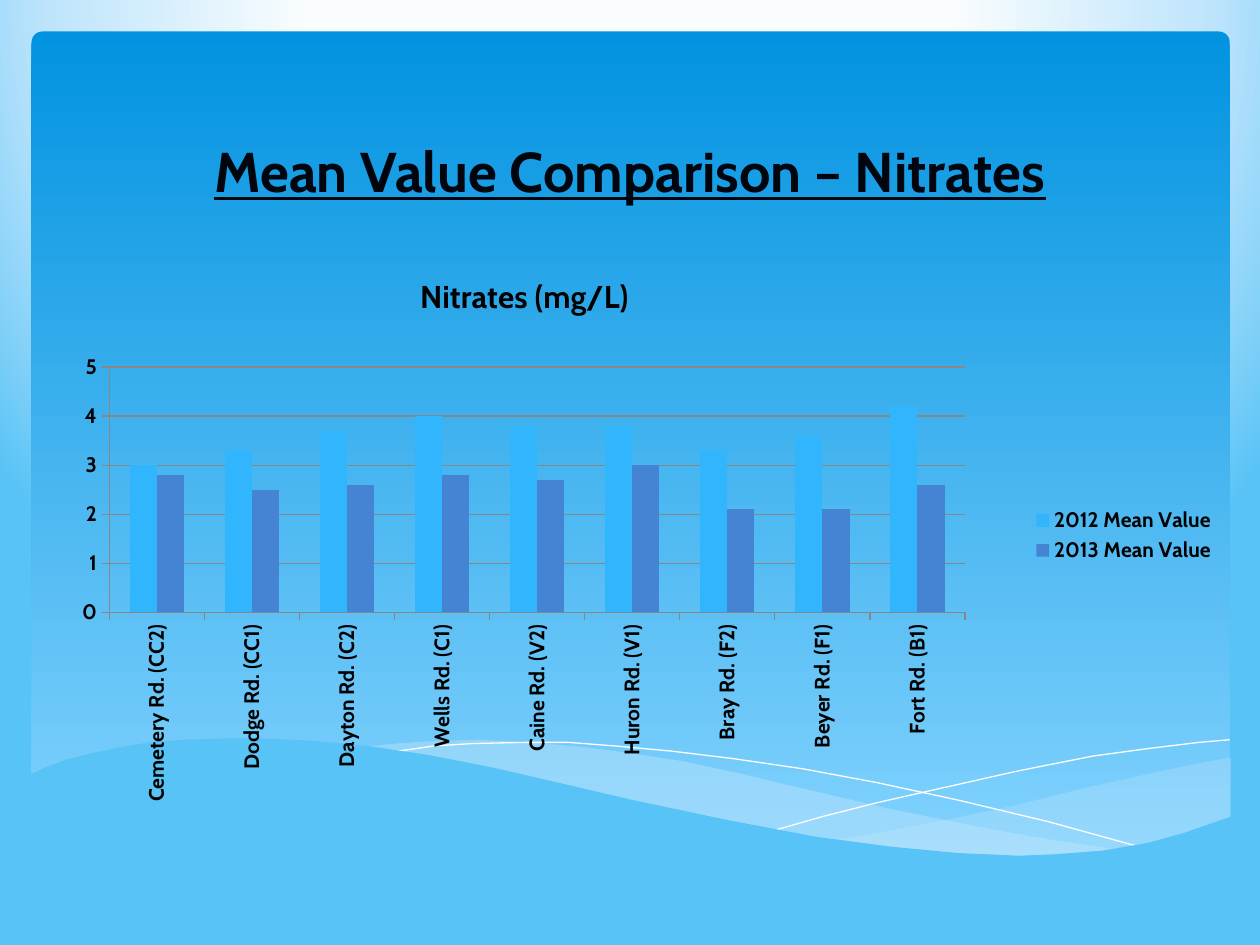
from lxml import etree
from pptx import Presentation
from pptx.chart.data import CategoryChartData
from pptx.dml.color import RGBColor
from pptx.enum import chart as charts, shapes, text
from pptx.oxml import parse_xml
from pptx.oxml.ns import nsdecls, qn
from pptx.util import Pt

FONT = "Cabin"
BLACK = RGBColor(0x00, 0x00, 0x00)
INK = RGBColor(0x01, 0x06, 0x0E)
WHITE = RGBColor(0xFF, 0xFF, 0xFF)
GRAY = RGBColor(0x87, 0x87, 0x87)
SKY_TOP = RGBColor(0x02, 0x93, 0xE0)
SKY_BOTTOM = RGBColor(0x83, 0xD3, 0xFE)
MIST = RGBColor(0xC6, 0xE7, 0xFC)
GLOW = RGBColor(0xFA, 0xFD, 0xFE)
HAZE = RGBColor(0xBE, 0xE4, 0xFC)
WATER = RGBColor(0x58, 0xC3, 0xF6)

FAR_WAVE = [
    (687, 10.8), (667.4, 14.4), (636.5, 20.9), (604.1, 28.1), (563.8, 38.2),
    (526.3, 46.1), (492.5, 52.6), (460.1, 58.3), (481.7, 61.2), (511.2, 64.8),
    (537.8, 67), (570.2, 67.7), (599, 66.2), (624.2, 63.4), (647.3, 58.3),
    (668.2, 52.6), (687, 45.4)]
MIDDLE_WAVE = [
    (627.1, 64.1), (586.8, 58.3), (542.2, 50.4), (492.5, 40.3), (437, 27.4),
    (403.9, 19.4), (373.7, 13), (344.9, 8.6), (318.2, 5), (285.8, 2.2),
    (257, 0.7), (231.8, 1.4), (209.5, 2.9), (190.1, 5), (216, 8.6),
    (244.8, 13), (275, 19.4), (307.4, 27.4), (365, 40.3), (416.9, 51.1),
    (463, 59), (504, 64.8), (540.7, 67), (573.1, 67.7), (601.9, 67)]
FALLING_LINE = [
    (206.6, 7.9), (231.1, 4.3), (253.4, 2.9), (283.7, 2.2), (308.2, 2.2),
    (335.5, 4.3), (367.2, 7.2), (402.5, 11.5), (442.1, 17.3), (484.6, 25.2),
    (531.4, 35.3), (582.5, 47.5), (637.2, 62.6)]
RISING_LINE = [
    (425.5, 52.6), (453.6, 44.6), (484.6, 36.7), (522.7, 28.1), (564.5, 18.7),
    (607.7, 10.1), (639.4, 5.8), (668.9, 2.2), (686.2, 0.7)]
FRONT_WAVE = [
    (687, 44.6), (660, 54), (639, 59.8), (613.4, 64.1), (586, 66.2),
    (566, 67), (531.4, 65.5), (493.2, 61.9), (450, 56.2), (400.3, 46.8),
    (345.6, 35.3), (305.3, 25.9), (265, 16.6), (228.2, 9.4), (193.7, 4.3),
    (163.4, 1.4), (135.4, 0), (110.9, 0), (88.6, 0.7), (69.1, 2.2),
    (51.8, 5), (38.2, 7.9), (20.9, 12.2), (9.4, 16.6), (0, 20.9),
    (0, 104.4), (687, 104.4)]

SITES = ["Cemetery Rd. (CC2)", "Dodge Rd. (CC1)", "Dayton Rd. (C2)",
         "Wells Rd. (C1)", "Caine Rd. (V2)", "Huron Rd. (V1)",
         "Bray Rd. (F2)", "Beyer Rd. (F1)", "Fort Rd. (B1)"]
MEANS = [
    ("2012 Mean Value", RGBColor(0x31, 0xB6, 0xFD),
     [3, 3.3, 3.7, 4, 3.8, 3.8, 3.3, 3.6, 4.2]),
    ("2013 Mean Value", RGBColor(0x45, 0x84, 0xD3),
     [2.8, 2.5, 2.6, 2.8, 2.7, 3, 2.1, 2.1, 2.6])]


def paint_background(page):
    """Fill the page with a glow that spreads from the top."""
    stops = "".join(
        f'<a:gs pos="{place * 1000}"><a:srgbClr val="{color}"/></a:gs>'
        for place, color in [(40, GLOW), (74, HAZE), (100, WATER)])
    fill = page.background.fill
    fill.solid()
    solid = page._element.find(".//" + qn("p:bgPr")).find(qn("a:solidFill"))
    solid.getparent().replace(solid, parse_xml(
        f'<a:gradFill {nsdecls("a")} rotWithShape="1"><a:gsLst>{stops}</a:gsLst>'
        '<a:path path="circle"><a:fillToRect l="20000" t="-40000" r="20000" '
        'b="140000"/></a:path></a:gradFill>'))


def add_panel(page, left, top, width, height):
    """Place the rounded sky panel."""
    panel = page.shapes.add_shape(shapes.MSO_SHAPE.ROUNDED_RECTANGLE,
                                  Pt(left), Pt(top), Pt(width), Pt(height))
    panel.shadow.inherit = False
    panel.adjustments[0] = 0.013
    panel.line.fill.background()
    panel.fill.gradient()
    panel.fill.gradient_angle = 270
    for stop, place, color in zip(panel.fill.gradient_stops, (0, 1),
                                  (SKY_TOP, SKY_BOTTOM)):
        stop.position = place
        stop.color.rgb = color


def add_outline(page, left, top, points, closed):
    """Build one freeform from points relative to a corner."""
    spots = [(Pt(left + x), Pt(top + y)) for x, y in points]
    builder = page.shapes.build_freeform(*spots[0], scale=1.0)
    builder.add_line_segments(spots[1:], close=closed)
    outline = builder.convert_to_shape()
    outline.shadow.inherit = False
    return outline


def add_waves(page, left, top):
    """Layer the waves and the thin lines over the foot of the panel."""
    def add_wave(points, color, opacity):
        """Place one filled wave."""
        wave = add_outline(page, left, top, points, True)
        wave.line.fill.background()
        wave.fill.solid()
        wave.fill.fore_color.rgb = color
        if opacity < 100:
            tint = wave._element.spPr.find(".//" + qn("a:srgbClr"))
            etree.SubElement(tint, qn("a:alpha"), val=str(opacity * 1000))

    add_wave(FAR_WAVE, MIST, 29)
    add_wave(MIDDLE_WAVE, MIST, 40)
    for points in (FALLING_LINE, RISING_LINE):
        curve = add_outline(page, left, top, points, False)
        curve.fill.background()
        curve.line.color.rgb = WHITE
        curve.line.width = Pt(0)
    add_wave(FRONT_WAVE, WATER, 100)


def add_title(page, left, top, width, height):
    """Place the underlined heading."""
    box = page.shapes.add_textbox(Pt(left), Pt(top), Pt(width), Pt(height))
    frame = box.text_frame
    frame.word_wrap = True
    frame.vertical_anchor = text.MSO_ANCHOR.BOTTOM
    frame.text = "Mean Value Comparison – Nitrates"
    para = frame.paragraphs[0]
    para.alignment = text.PP_ALIGN.CENTER
    style_font(para.runs[0].font, 32, INK)
    para.runs[0].font.underline = True


def style_font(font, size, color=BLACK):
    """Set a bold font in the deck's typeface."""
    font.name = FONT
    font.size = Pt(size)
    font.bold = True
    font.color.rgb = color


def set_layout(part, index, **values):
    """Fix the place of a chart part as fractions of the chart."""
    for old in part.findall(qn("c:layout")):
        part.remove(old)
    layout = etree.Element(qn("c:layout"))
    manual = etree.SubElement(layout, qn("c:manualLayout"))
    for name, value in values.items():
        etree.SubElement(manual, qn("c:" + name), val=str(value))
    part.insert(index, layout)


def add_nitrate_chart(page, left, top, width, height):
    """Place the column chart of both years."""
    data = CategoryChartData()
    data.categories = SITES
    for name, _, values in MEANS:
        data.add_series(name, values)
    chart = page.shapes.add_chart(
        charts.XL_CHART_TYPE.COLUMN_CLUSTERED,
        Pt(left), Pt(top), Pt(width), Pt(height), data).chart
    chart.font.name = FONT
    chart.font.size = Pt(10)
    chart.font.color.rgb = BLACK

    chart.has_title = True
    chart.chart_title.text_frame.text = "Nitrates (mg/L)"
    style_font(chart.chart_title.text_frame.paragraphs[0].runs[0].font, 18)
    chart.has_legend = True
    chart.legend.position = charts.XL_LEGEND_POSITION.RIGHT
    chart.legend.include_in_layout = False
    style_font(chart.legend.font, 12)

    for axis in (chart.category_axis, chart.value_axis):
        style_font(axis.tick_labels.font, 12)
        axis.major_tick_mark = charts.XL_TICK_MARK.OUTSIDE
        axis.format.line.color.rgb = GRAY
    chart.category_axis.tick_labels.font._element.getparent().getparent(
    ).getparent().find(qn("a:bodyPr")).set("rot", "-5400000")
    scale = chart.value_axis
    scale.minimum_scale, scale.maximum_scale, scale.major_unit = 0, 5, 1
    scale.has_major_gridlines = True
    scale.major_gridlines.format.line.color.rgb = GRAY

    plot = chart.plots[0]
    plot.gap_width = 150
    plot.overlap = 0
    plot.vary_by_categories = False
    for series, (_, color, _) in zip(plot.series, MEANS):
        series.format.fill.solid()
        series.format.fill.fore_color.rgb = color

    set_layout(chart.chart_title._element, 1,
               xMode="edge", yMode="edge", x=0.32, y=0.03)
    set_layout(plot._element.getparent(), 0, layoutTarget="inner",
               xMode="edge", yMode="edge", x=0.065, y=0.203, w=0.715, h=0.433)


def main():
    """Build the slide and save it."""
    deck = Presentation()
    deck.slide_width, deck.slide_height = Pt(720), Pt(540)
    page = deck.slides.add_slide(deck.slide_layouts[6])
    paint_background(page)
    add_panel(page, 18, 18, 684.7, 475)
    add_waves(page, 16.5, 422)
    add_title(page, 54, 66, 612, 54)
    add_nitrate_chart(page, 18, 144, 684, 324)
    deck.save("out.pptx")


if __name__ == "__main__":
    main()
